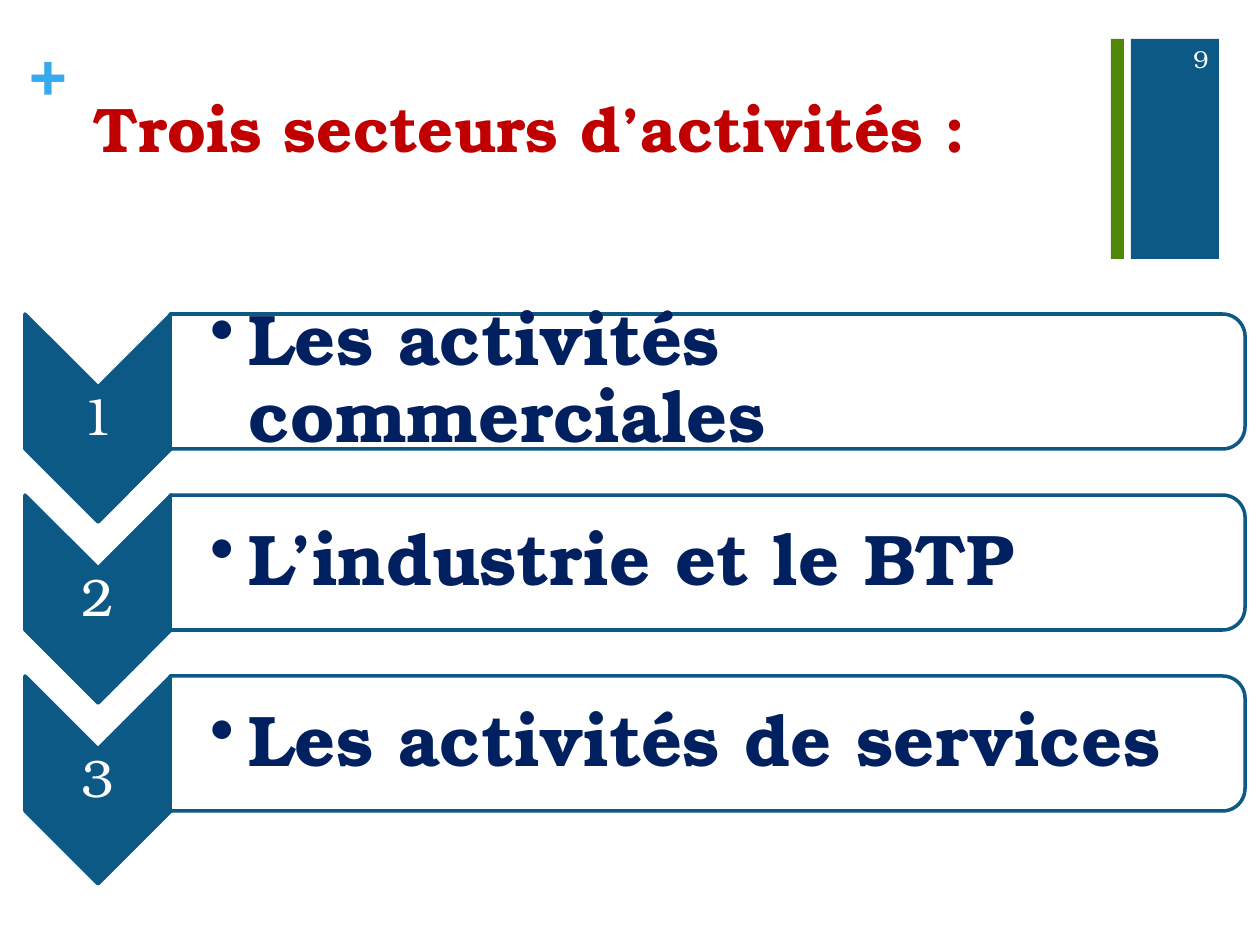
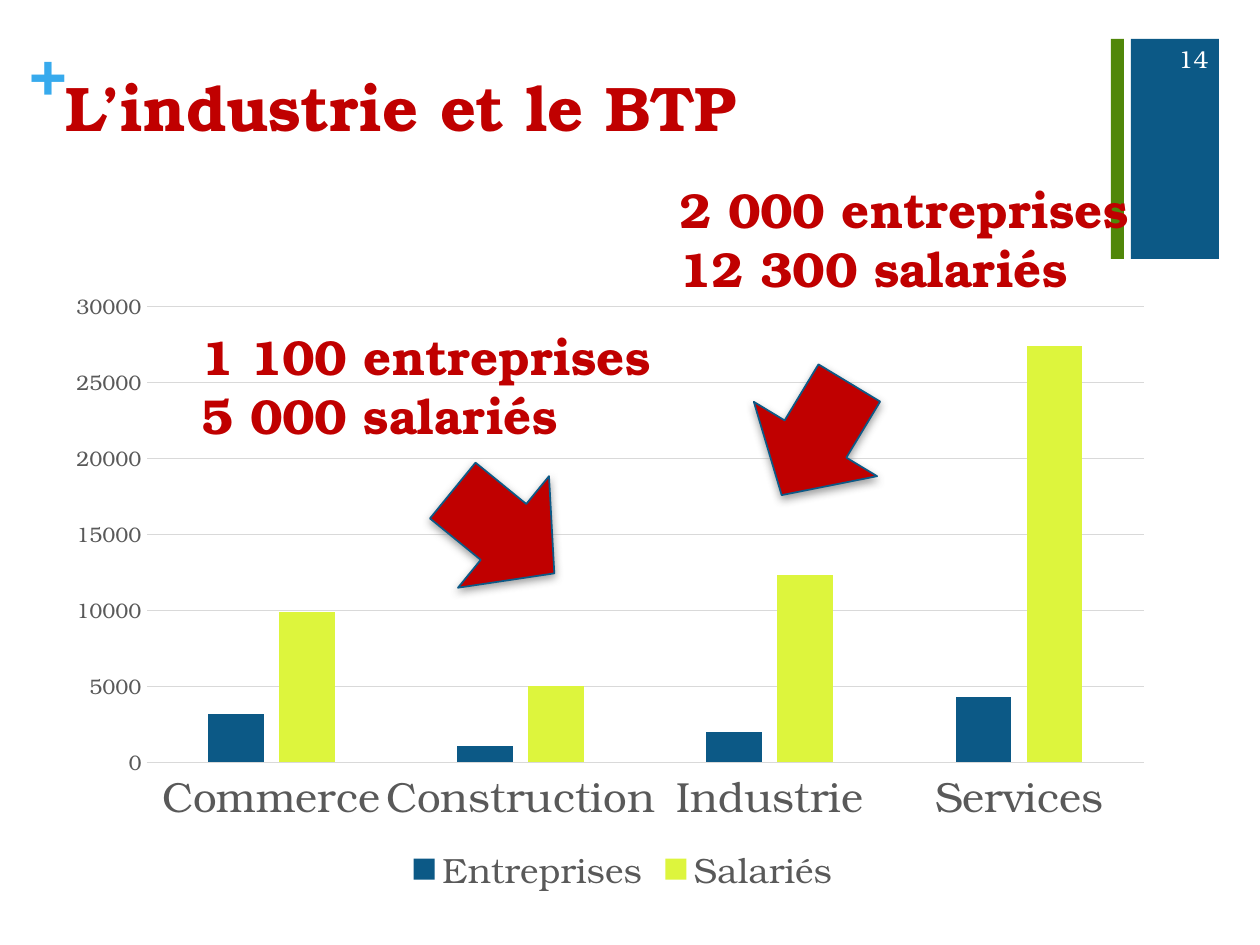
from pptx import Presentation
from pptx.chart.data import CategoryChartData
from pptx.dml.color import RGBColor
from pptx.enum.chart import XL_CHART_TYPE, XL_LEGEND_POSITION, XL_TICK_MARK
from pptx.enum.shapes import MSO_SHAPE
from pptx.enum.text import MSO_ANCHOR, PP_ALIGN
from pptx.oxml import parse_xml
from pptx.oxml.ns import nsdecls, qn
from pptx.util import Pt

RECT = MSO_SHAPE.RECTANGLE
CHEVRON = MSO_SHAPE.CHEVRON
ROUND_TOP = MSO_SHAPE.ROUND_2_SAME_RECTANGLE
ARROW = MSO_SHAPE.RIGHT_ARROW
LEFT, CENTER, RIGHT = PP_ALIGN.LEFT, PP_ALIGN.CENTER, PP_ALIGN.RIGHT
TOP, MIDDLE = MSO_ANCHOR.TOP, MSO_ANCHOR.MIDDLE
NO_TICK = XL_TICK_MARK.NONE
PX = 914400 / 126


class Theme:
    font = "TeX Gyre Bonum"
    blue = RGBColor(0x0C, 0x59, 0x86)
    green = RGBColor(0x50, 0x87, 0x09)
    sky = RGBColor(0x37, 0xAA, 0xED)
    red = RGBColor(0xC0, 0x00, 0x00)
    navy = RGBColor(0x00, 0x20, 0x60)
    lime = RGBColor(0xDD, 0xF5, 0x3D)
    white = RGBColor(0xFF, 0xFF, 0xFF)
    gray = RGBColor(0x59, 0x59, 0x59)
    grid = RGBColor(0xD9, 0xD9, 0xD9)
    title, sector, step, callout, page = 36, 41, 30, 28, 14
    category, legend, value = 24, 20, 12


def add_block(s, kind, box, fill, line=None, weight=2, rotation=0):
    sp = s.shapes.add_shape(kind, *[round(v * PX) for v in box])
    sp.shadow.inherit = False
    sp.rotation = rotation
    sp.fill.solid()
    sp.fill.fore_color.rgb = fill
    if line is None:
        sp.line.fill.background()
    else:
        sp.line.color.rgb = line
        sp.line.width = Pt(weight)
    return sp


def add_text(s, box, lines, size, color, bold=False, align=LEFT, anchor=TOP, insets=None):
    tf = s.shapes.add_textbox(*[round(v * PX) for v in box]).text_frame
    tf.word_wrap = True
    tf.vertical_anchor = anchor
    if insets is not None:
        left, other = [round(v * PX) for v in insets]
        tf.margin_left = left
        tf.margin_top = tf.margin_right = tf.margin_bottom = other
    tf.text = "\n".join(lines)
    for p in tf.paragraphs:
        p.alignment = align
        p.font.name = Theme.font
        p.font.size = Pt(size)
        p.font.bold = bold
        p.font.color.rgb = color
    return tf


prs = Presentation()
prs.slide_width = round(1260 * PX)
prs.slide_height = round(945 * PX)

slides = []
for title, title_box, number in [
    ("Trois secteurs d’activités :", (81, 83, 1061, 154), "9"),
    ("L’industrie et le BTP", (53, 62, 1095, 154), "14"),
]:
    s = prs.slides.add_slide(prs.slide_layouts[6])
    add_block(s, RECT, (1131, 39, 88, 220), Theme.blue)
    add_text(s, (30, 32, 36, 77), ["+"], Theme.title, Theme.sky, True, insets=(0, 0))
    add_block(s, RECT, (1111, 39, 13, 220), Theme.green)
    add_text(s, title_box, [title], Theme.title, Theme.red, True)
    add_text(s, (1144, 34, 77, 50), [number], Theme.page, Theme.white, align=RIGHT, anchor=MIDDLE)
    slides.append(s)
sectors_slide, chart_slide = slides

sectors = ["Les activités commerciales", "L’industrie et le BTP", "Les activités de services"]
ROW_PITCH = 181
s = sectors_slide
for i, sector in enumerate(sectors):
    y = 314 + i * ROW_PITCH
    add_block(s, CHEVRON, (-6, y + 31, 208, 146), Theme.blue, Theme.blue, rotation=90)
    tf = add_text(s, (25, y + 73, 146, 63), [str(i + 1)], Theme.step, Theme.white,
                  align=CENTER, anchor=MIDDLE, insets=(3, 3))
    tf.paragraphs[0].line_spacing = 0.9
    add_block(s, ROUND_TOP, (640, y - 470, 135, 1075), Theme.white, Theme.blue, rotation=90)
    tf = add_text(s, (170, y + 6, 1068, 122), [sector], Theme.sector, Theme.navy, True,
                  anchor=MIDDLE, insets=(40, 4))
    p = tf.paragraphs[0]
    p.line_spacing = 0.9
    pPr = p._p.get_or_add_pPr()
    pPr.set("marL", str(round(39 * PX)))
    pPr.set("indent", str(round(-39 * PX)))
    bullet = parse_xml(f'<a:buChar {nsdecls("a")} char="•"/>')
    pPr.insert_element_before(bullet, "a:tabLst", "a:defRPr", "a:extLst")

s = chart_slide
data = CategoryChartData()
data.categories = ["Commerce", "Construction", "Industrie", "Services"]
data.add_series("Entreprises", (3200, 1100, 2000, 4300))
data.add_series("Salariés", (9900, 5000, 12300, 27400))
chart_box = [round(v * PX) for v in (69, 275, 1108, 625)]
chart = s.shapes.add_chart(XL_CHART_TYPE.COLUMN_CLUSTERED, *chart_box, data).chart
chart.has_title = False
chart.font.name = Theme.font
chart.has_legend = True
chart.legend.position = XL_LEGEND_POSITION.BOTTOM
chart.legend.include_in_layout = False

plot = chart.plots[0]
plot.gap_width = 219
plot.overlap = -27
plot.vary_by_categories = False
for series, color in zip(plot.series, (Theme.blue, Theme.lime)):
    series.format.fill.solid()
    series.format.fill.fore_color.rgb = color

cat_axis, val_axis = chart.category_axis, chart.value_axis
for font, size in [
    (cat_axis.tick_labels.font, Theme.category),
    (val_axis.tick_labels.font, Theme.value),
    (chart.legend.font, Theme.legend),
]:
    font.name = Theme.font
    font.size = Pt(size)
    font.color.rgb = Theme.gray
for axis in (cat_axis, val_axis):
    axis.major_tick_mark = axis.minor_tick_mark = NO_TICK
for line in (cat_axis.format.line, val_axis.major_gridlines.format.line):
    line.color.rgb = Theme.grid
    line.width = Pt(0.75)
val_axis.format.line.fill.background()
val_axis.minimum_scale, val_axis.maximum_scale, val_axis.major_unit = 0, 30000, 5000

plot_area = chart.element.find(".//" + qn("c:plotArea"))
for layout in plot_area.findall(qn("c:layout")):
    plot_area.remove(layout)
plot_area.insert(0, parse_xml(
    f'<c:layout {nsdecls("c")}><c:manualLayout><c:layoutTarget val="inner"/>'
    '<c:xMode val="edge"/><c:yMode val="edge"/><c:x val="0.07"/><c:y val="0.05"/>'
    '<c:w val="0.9"/><c:h val="0.73"/></c:manualLayout></c:layout>'))

for arrow_box, rotation, text_box, lines in [
    ((438, 460, 131, 144), 39.2, (189, 320, 630, 131), ["1 100 entreprises", "5 000 salariés"]),
    ((750, 367, 131, 144), 121.1, (667, 173, 519, 131), ["2 000 entreprises", "12 300 salariés"]),
]:
    sp = add_block(s, ARROW, arrow_box, Theme.red, Theme.blue, 1, rotation)
    sp._element.spPr.find(qn("a:effectLst")).append(parse_xml(
        f'<a:outerShdw {nsdecls("a")} blurRad="63500" dist="25400" dir="5400000" rotWithShape="0">'
        '<a:srgbClr val="808080"><a:alpha val="75000"/></a:srgbClr></a:outerShdw>'))
    add_text(s, text_box, lines, Theme.callout, Theme.red, True)

prs.save("out.pptx")
